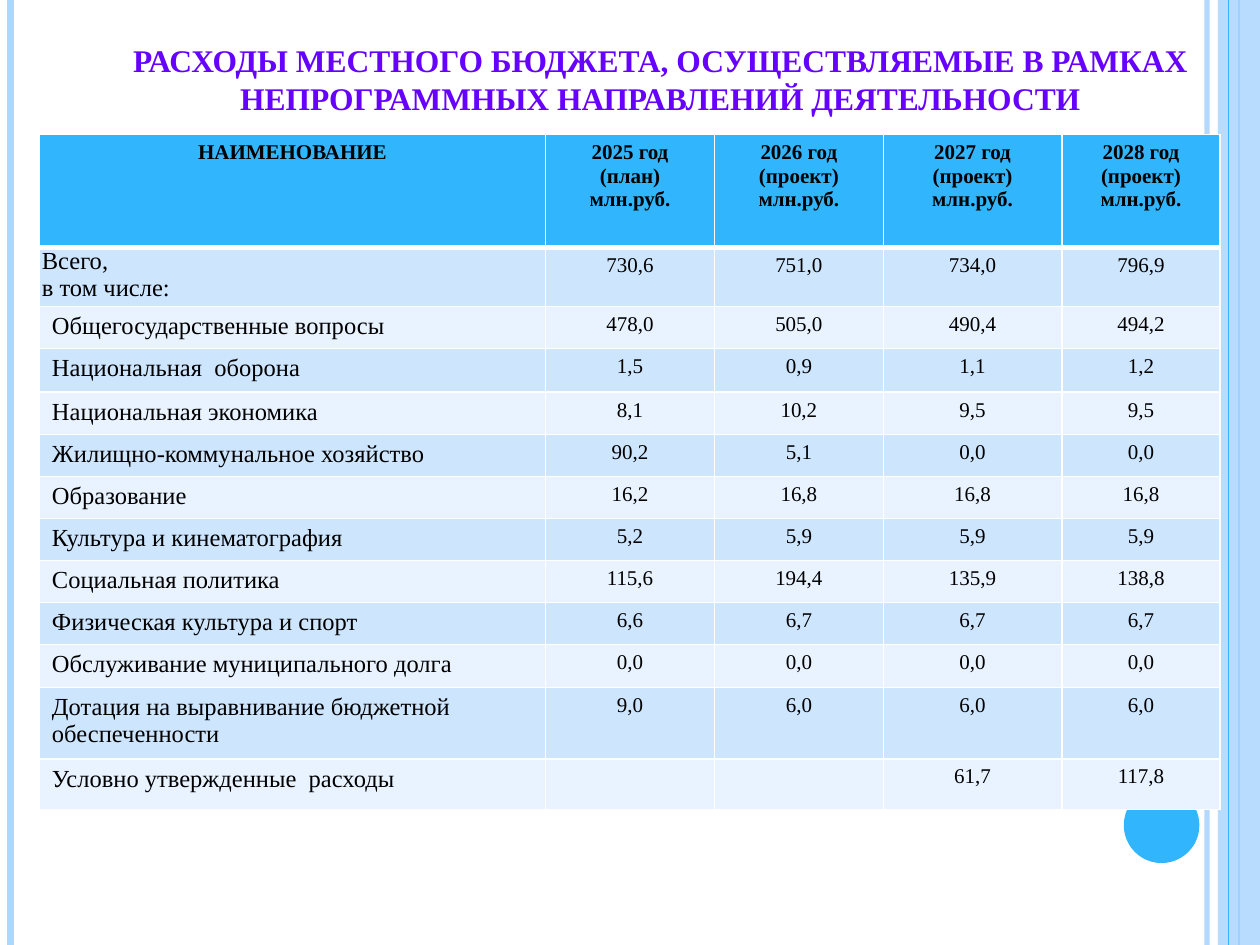
from lxml.etree import SubElement
from pptx import Presentation
from pptx.dml.color import RGBColor
from pptx.enum.shapes import MSO_CONNECTOR, MSO_SHAPE
from pptx.enum.text import MSO_ANCHOR, PP_ALIGN
from pptx.oxml.ns import qn
from pptx.util import Pt

COLORS = {
    "pale": "AED7FE", "accent": "31B6FD", "title": "6600FF", "text": "000000",
    "band_dark": "CEE5FE", "band_light": "E8F3FF", "border": "FFFFFF",
}
FONT = "Times New Roman"
YEARS = [("2025", "план"), ("2026", "проект"), ("2027", "проект"), ("2028", "проект")]
HEADER = ["НАИМЕНОВАНИЕ"] + [f"{year} год\n({status})\nмлн.руб." for year, status in YEARS]
EXPENSES = [
    ("Всего,\nв том числе:", "730,6", "751,0", "734,0", "796,9"),
    ("Общегосударственные вопросы", "478,0", "505,0", "490,4", "494,2"),
    ("Национальная  оборона", "1,5", "0,9", "1,1", "1,2"),
    ("Национальная экономика", "8,1", "10,2", "9,5", "9,5"),
    ("Жилищно-коммунальное хозяйство", "90,2", "5,1", "0,0", "0,0"),
    ("Образование", "16,2", "16,8", "16,8", "16,8"),
    ("Культура и кинематография", "5,2", "5,9", "5,9", "5,9"),
    ("Социальная политика", "115,6", "194,4", "135,9", "138,8"),
    ("Физическая культура и спорт", "6,6", "6,7", "6,7", "6,7"),
    ("Обслуживание муниципального долга", "0,0", "0,0", "0,0", "0,0"),
    ("Дотация на выравнивание бюджетной обеспеченности", "9,0", "6,0", "6,0", "6,0"),
    ("Условно утвержденные  расходы", "", "", "61,7", "117,8"),
]
COLUMN_WIDTHS = [289.3, 96.5, 96.5, 102, 90.5]
ROW_HEIGHTS = [64.5, 33.5, 24, 25] + [24] * 6 + [24.5, 40.5, 28.8]


def rgb(name):
    return RGBColor.from_string(COLORS[name])


def set_alpha(fill, percent):
    color = fill._xPr.find(qn("a:solidFill"))[0]
    SubElement(color, qn("a:alpha"), val=str(percent * 1000))


def style_text(frame, size, color, bold, align):
    for paragraph in frame.paragraphs:
        paragraph.alignment = align
        font = paragraph.font
        font.name, font.size, font.bold = FONT, Pt(size), bold
        font.color.rgb = rgb(color)


def add_stripe(slide, x, top, height, color, width, alpha=100):
    stripe = slide.shapes.add_connector(
        MSO_CONNECTOR.STRAIGHT, Pt(x), Pt(top), Pt(x), Pt(top + height))
    stripe.line.color.rgb = rgb(color)
    stripe.line.width = Pt(width)
    if alpha < 100:
        set_alpha(stripe.line.fill, alpha)
    SubElement(stripe._element.spPr, qn("a:effectLst"))


def add_plain_shape(slide, kind, left, top, width, height, color):
    shape = slide.shapes.add_shape(kind, Pt(left), Pt(top), Pt(width), Pt(height))
    shape.shadow.inherit = False
    shape.fill.solid()
    shape.fill.fore_color.rgb = rgb(color)
    shape.line.fill.background()
    return shape


def add_decoration(slide, left, top, width, height):
    right = left + width
    add_stripe(slide, right - 30.2, top, height, "pale", 3, alpha=93)
    add_stripe(slide, left + 6, top, height, "pale", 4.5)
    add_stripe(slide, right - 12, top, height, "accent", 1.5)
    side_band = add_plain_shape(
        slide, MSO_SHAPE.RECTANGLE, right - 24, top, 24, height, "pale")
    set_alpha(side_band.fill, 87)
    add_stripe(slide, right - 18, top, height, "accent", 0.75)
    add_plain_shape(
        slide, MSO_SHAPE.OVAL, right - 77.8, top + height - 90, 43.2, 43.2, "accent")


def add_title(slide, left, top, width, height):
    title = slide.shapes.add_textbox(Pt(left), Pt(top), Pt(width), Pt(height)).text_frame
    title.word_wrap = True
    title.vertical_anchor = MSO_ANCHOR.MIDDLE
    title.text = ("РАСХОДЫ МЕСТНОГО БЮДЖЕТА, ОСУЩЕСТВЛЯЕМЫЕ В РАМКАХ "
                  "НЕПРОГРАММНЫХ НАПРАВЛЕНИЙ ДЕЯТЕЛЬНОСТИ")
    style_text(title, 18, "title", True, PP_ALIGN.CENTER)


def set_borders(cell, widths):
    properties = cell._tc.get_or_add_tcPr()
    for side, width in widths.items():
        border = SubElement(properties, qn(f"a:ln{side}"), w=str(Pt(width)))
        fill = SubElement(border, qn("a:solidFill"))
        SubElement(fill, qn("a:srgbClr"), val=COLORS["border"])


def add_expense_table(slide, left, top):
    rows = [HEADER] + EXPENSES
    table = slide.shapes.add_table(
        len(rows), len(HEADER), Pt(left), Pt(top),
        Pt(sum(COLUMN_WIDTHS)), Pt(sum(ROW_HEIGHTS))).table
    for column, width in zip(table.columns, COLUMN_WIDTHS):
        column.width = Pt(width)
    for row, height in zip(table.rows, ROW_HEIGHTS):
        row.height = Pt(height)

    for r, values in enumerate(rows):
        is_header = r == 0
        band = "accent" if is_header else "band_dark" if r % 2 else "band_light"
        for c, value in enumerate(values):
            cell = table.cell(r, c)
            is_name = c == 0 and not is_header
            cell.text = value
            style_text(cell.text_frame, 14 if is_name else 12, "text", is_header,
                       PP_ALIGN.LEFT if is_name else PP_ALIGN.CENTER)
            set_borders(cell, {"L": 1, "R": 1, "T": 3 if r == 1 else 1,
                               "B": 3 if is_header else 1})
            cell.fill.solid()
            cell.fill.fore_color.rgb = rgb(band)

    # The total row label sits tight in its cell
    total = table.cell(1, 0)
    total.margin_left = total.margin_right = Pt(1.44)
    total.margin_top = total.margin_bottom = Pt(0)


def main():
    deck = Presentation()
    deck.slide_width, deck.slide_height = Pt(720), Pt(540)
    slide = deck.slides.add_slide(deck.slide_layouts[6])
    add_decoration(slide, 0, 0, 720, 540)
    add_title(slide, 33, 19.5, 689, 51)
    add_expense_table(slide, 22.5, 77)
    deck.save("out.pptx")


if __name__ == "__main__":
    main()
